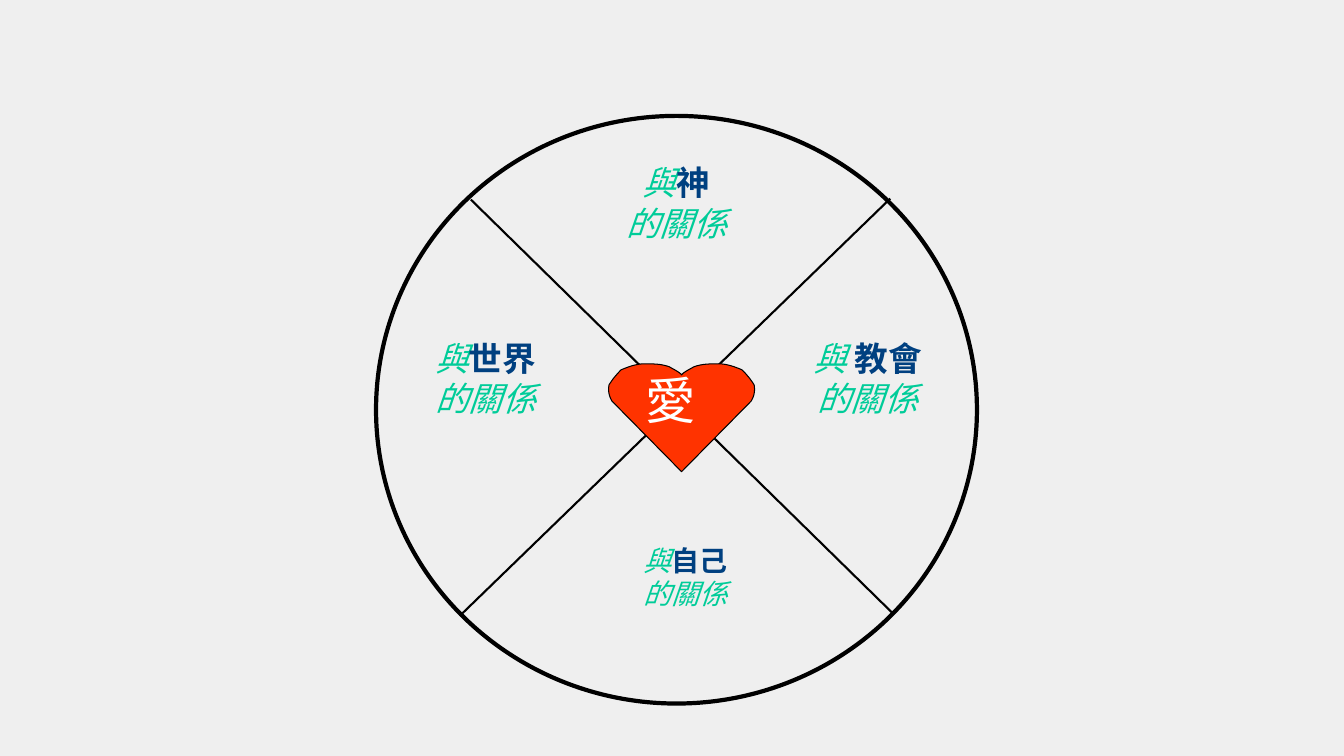
from dataclasses import dataclass

from lxml import etree
from pptx import Presentation
from pptx.dml.color import RGBColor
from pptx.enum.shapes import MSO_CONNECTOR, MSO_SHAPE
from pptx.enum.text import PP_ALIGN
from pptx.oxml.ns import qn
from pptx.util import Emu, Pt

EMU_PER_PX = 9144
BLANK_LAYOUT = 6
STRAIGHT = MSO_CONNECTOR.STRAIGHT
OVAL = MSO_SHAPE.OVAL
CENTER = PP_ALIGN.CENTER


@dataclass(frozen=True)
class Theme:
    background: str = "EFEFEF"
    line: str = "000000"
    heart: str = "FF3300"
    heart_text: str = "FFFFFF"
    relation: str = "00CC99"
    subject: str = "004080"
    label_font: str = "Arial"
    heart_font: str = "Montserrat"
    label_size: int = 24
    small_label_size: int = 20
    heart_size: int = 36
    spoke_width: float = 1.5
    wheel_width: float = 3
    heart_width: float = 0.75


THEME = Theme()

HEART_CENTER = 676
HEART_NOTCH = (676, 372)
HEART_TIP = (676, 468)
# Each curve of the left lobe: two control points and an end point.
LEFT_LOBE = [
    ((674, 369), (667, 366), (664, 364)),
    ((656, 361), (648, 361), (639, 361)),
    ((631, 361), (623, 364), (616, 367)),
    ((611, 372), (607, 377), (604, 382)),
    ((603, 388), (604, 393), (607, 398)),
]
CURVE_STEPS = 8

SPOKES = [(467, 198, 885, 608), (456, 611, 883, 197)]

# Left, top, width, type size, opening word, subject.
LABELS = [
    (352, 330, 259, THEME.label_size, "與", "世界"),
    (731, 330, 259, THEME.label_size, "與 ", "教會"),
    (541, 156, 260, THEME.label_size, "與", "神"),
    (540, 534, 279, THEME.small_label_size, "與", "自己"),
]
LABEL_HEIGHT = 106


def px(length):
    return Emu(round(length * EMU_PER_PX))


def color(value):
    return RGBColor.from_string(value)


def set_line(shape, width):
    shape.line.color.rgb = color(THEME.line)
    shape.line.width = Pt(width)


def add_spoke(slide, ends):
    spoke = slide.shapes.add_connector(STRAIGHT, *map(px, ends))
    set_line(spoke, THEME.spoke_width)
    etree.SubElement(spoke._element.spPr, qn("a:effectLst"))


def add_wheel(slide, left, top, width, height):
    wheel = slide.shapes.add_shape(OVAL, px(left), px(top), px(width), px(height))
    wheel.shadow.inherit = False
    wheel.fill.background()
    set_line(wheel, THEME.wheel_width)


def curve_points(start, first, second, end):
    """Return points along a cubic curve, without its start."""
    points = []
    for step in range(1, CURVE_STEPS + 1):
        t = step / CURVE_STEPS
        u = 1 - t
        weights = (u**3, 3 * u * u * t, 3 * u * t * t, t**3)
        points.append(tuple(
            sum(weight * value for weight, value in zip(weights, values))
            for values in zip(start, first, second, end)
        ))
    return points


def add_heart(slide):
    """Draw the left lobe and its mirror image as one closed outline."""
    left_side = [HEART_NOTCH]
    for curve in LEFT_LOBE:
        left_side += curve_points(left_side[-1], *curve)
    right_side = [(2 * HEART_CENTER - x, y) for x, y in reversed(left_side[1:])]
    outline = [(px(x), px(y)) for x, y in left_side + [HEART_TIP] + right_side]
    builder = slide.shapes.build_freeform(*outline[0])
    builder.add_line_segments(outline[1:], close=True)
    heart = builder.convert_to_shape()
    heart.shadow.inherit = False
    heart.fill.solid()
    heart.fill.fore_color.rgb = color(THEME.heart)
    set_line(heart, THEME.heart_width)


def add_text_frame(slide, left, top, width, height):
    box = slide.shapes.add_textbox(px(left), px(top), px(width), px(height))
    box.text_frame.word_wrap = True
    return box.text_frame


def add_run(paragraph, text, font_name, size, text_color, bold=False, italic=False):
    run = paragraph.add_run()
    run.text = text
    run.font.name = font_name
    run.font.size = Pt(size)
    run.font.color.rgb = color(text_color)
    run.font.bold = bold
    run.font.italic = italic


def add_label(slide, left, top, width, size, opening, subject):
    frame = add_text_frame(slide, left, top, width, LABEL_HEIGHT)
    first, second = frame.paragraphs[0], frame.add_paragraph()
    first.alignment = second.alignment = CENTER
    font_name = THEME.label_font
    add_run(first, opening, font_name, size, THEME.relation, italic=True)
    add_run(first, subject, font_name, size, THEME.subject, bold=True)
    add_run(second, "的關係", font_name, size, THEME.relation, italic=True)


def add_heart_word(slide):
    frame = add_text_frame(slide, 607, 361, 152, 71)
    frame.margin_left = px(33)
    add_run(frame.paragraphs[0], "愛", THEME.heart_font, THEME.heart_size,
            THEME.heart_text)


def main():
    presentation = Presentation()
    presentation.slide_width = px(1333)
    presentation.slide_height = px(750)
    slide = presentation.slides.add_slide(presentation.slide_layouts[BLANK_LAYOUT])
    slide.background.fill.solid()
    slide.background.fill.fore_color.rgb = color(THEME.background)
    for ends in SPOKES:
        add_spoke(slide, ends)
    add_wheel(slide, 373, 115, 596, 583)
    add_heart(slide)
    add_heart_word(slide)
    for label in LABELS:
        add_label(slide, *label)
    presentation.save("out.pptx")


if __name__ == "__main__":
    main()
